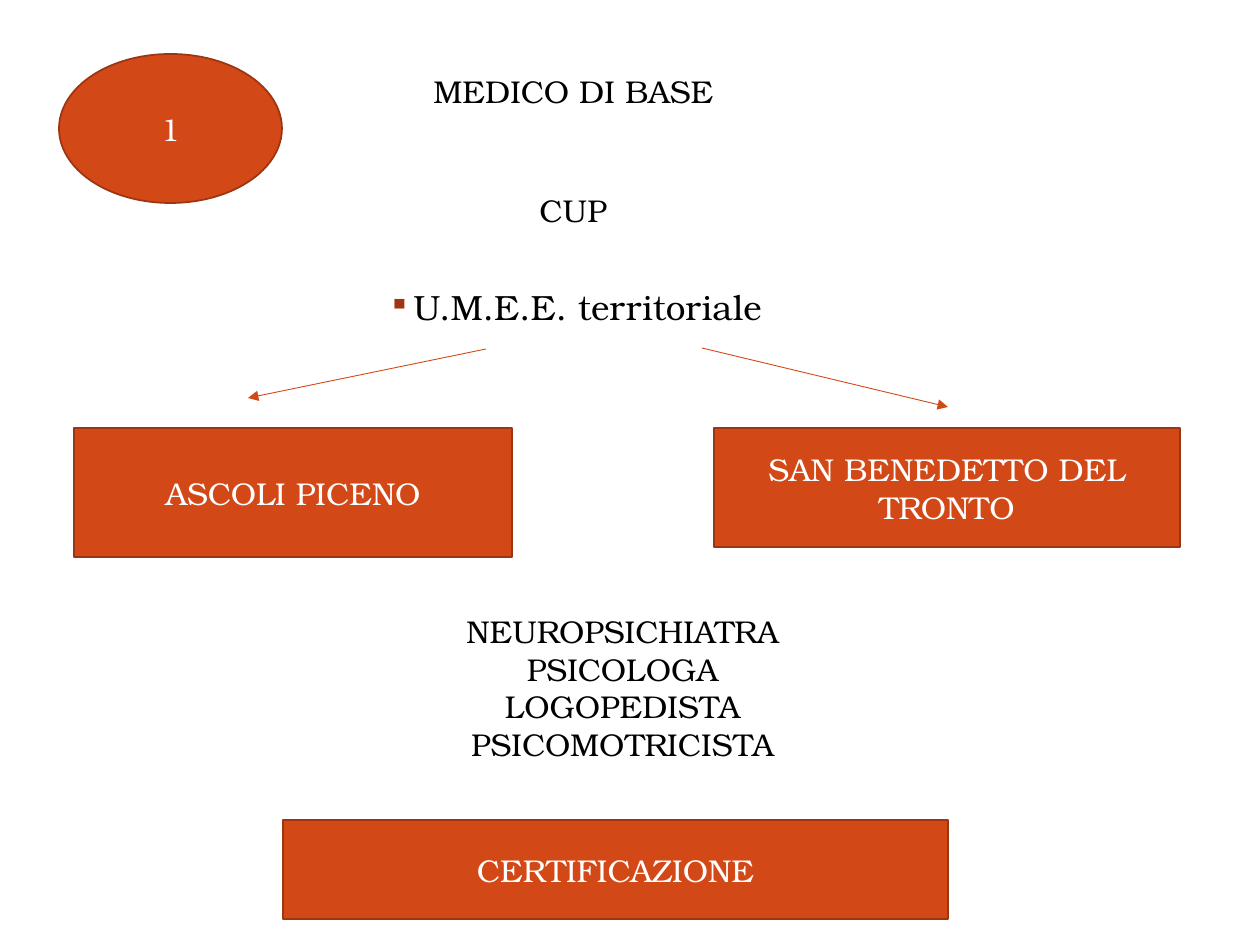
from lxml.etree import SubElement
from pptx import Presentation
from pptx.dml.color import RGBColor
from pptx.enum.shapes import MSO_CONNECTOR as Connector, MSO_SHAPE as Shape
from pptx.enum.text import MSO_ANCHOR as Anchor, MSO_AUTO_SIZE as AutoSize, PP_ALIGN as Align
from pptx.oxml.ns import qn
from pptx.util import Emu, Pt

ORANGE = RGBColor(0xD3, 0x48, 0x17)
RUST = RGBColor(0x9C, 0x35, 0x11)
BLACK = RGBColor(0, 0, 0)
WHITE = RGBColor(255, 255, 255)
BULLET_COLOR = "9E3611"
EMU_PER_PX = 914400 / 126


def px(*lengths):
    return [Emu(round(length * EMU_PER_PX)) for length in lengths]


def add_bullet(paragraph, indent):
    properties = paragraph._p.get_or_add_pPr()
    properties.set("marL", str(indent))
    properties.set("indent", str(-indent))
    color = SubElement(properties, qn("a:buClr"))
    SubElement(color, qn("a:srgbClr"), val=BULLET_COLOR)
    SubElement(properties, qn("a:buSzPct"), val="85000")
    SubElement(properties, qn("a:buChar"), char="▪")


def write_text(frame, text, *, font, size=18, color=BLACK, align=Align.CENTER,
               anchor=Anchor.TOP, wrap=True, bullet_indent=None, line_spacing=None):
    """Write each line of the text as one paragraph."""
    frame.word_wrap = wrap
    frame.vertical_anchor = anchor
    for index, line in enumerate(text.split("\n")):
        paragraph = frame.add_paragraph() if index else frame.paragraphs[0]
        paragraph.alignment = align
        if line_spacing:
            paragraph.line_spacing = line_spacing
        if bullet_indent:
            add_bullet(paragraph, bullet_indent)
        run = paragraph.add_run()
        run.text = line
        run.font.name = font
        run.font.size = Pt(size)
        run.font.color.rgb = color


class FlowSlide:
    font = "TeX Gyre Bonum"

    def __init__(self, slide):
        self.slide = slide

    def node(self, kind, box, text):
        shape = self.slide.shapes.add_shape(kind, *px(*box))
        shape.shadow.inherit = False
        shape.fill.solid()
        shape.fill.fore_color.rgb = ORANGE
        shape.line.color.rgb = RUST
        shape.line.width = Pt(1)
        write_text(shape.text_frame, text, font=self.font, color=WHITE, anchor=Anchor.MIDDLE)

    def label(self, box, text, grow=True, **text_format):
        frame = self.slide.shapes.add_textbox(*px(*box)).text_frame
        write_text(frame, text, font=self.font, **text_format)
        frame.auto_size = AutoSize.SHAPE_TO_FIT_TEXT if grow else AutoSize.NONE

    def arrow(self, start, end):
        connector = self.slide.shapes.add_connector(Connector.STRAIGHT, *px(*start, *end))
        connector.line.color.rgb = ORANGE
        connector.line.width = Pt(0.5)
        SubElement(connector.line._get_or_add_ln(), qn("a:tailEnd"), type="triangle")
        SubElement(connector._element.spPr, qn("a:effectLst"))


def main():
    presentation = Presentation()
    presentation.slide_width, presentation.slide_height = px(1260, 945)
    blank_layout = presentation.slide_layouts[6]
    flow = FlowSlide(presentation.slides.add_slide(blank_layout))

    flow.label((60, 284, 1030, 757), "U.M.E.E. territoriale", grow=False, size=20,
               bullet_indent=px(25)[0], line_spacing=0.9)
    flow.arrow((486, 349), (248, 398))
    flow.arrow((702, 348), (948, 407))
    flow.node(Shape.RECTANGLE, (74, 428, 438, 129), "ASCOLI PICENO")
    flow.node(Shape.RECTANGLE, (714, 428, 466, 119), "SAN BENEDETTO DEL TRONTO")
    flow.label((421, 66, 309, 50), "MEDICO DI BASE", align=Align.LEFT, wrap=False)
    flow.label((527, 185, 96, 50), "CUP", align=Align.LEFT, wrap=False)
    flow.label((445, 605, 355, 165),
               "NEUROPSICHIATRA\nPSICOLOGA\nLOGOPEDISTA\nPSICOMOTRICISTA",
               anchor=Anchor.MIDDLE)
    flow.node(Shape.RECTANGLE, (283, 820, 665, 99), "CERTIFICAZIONE")
    flow.node(Shape.OVAL, (59, 54, 223, 149), "1")

    presentation.save("out.pptx")


if __name__ == "__main__":
    main()
